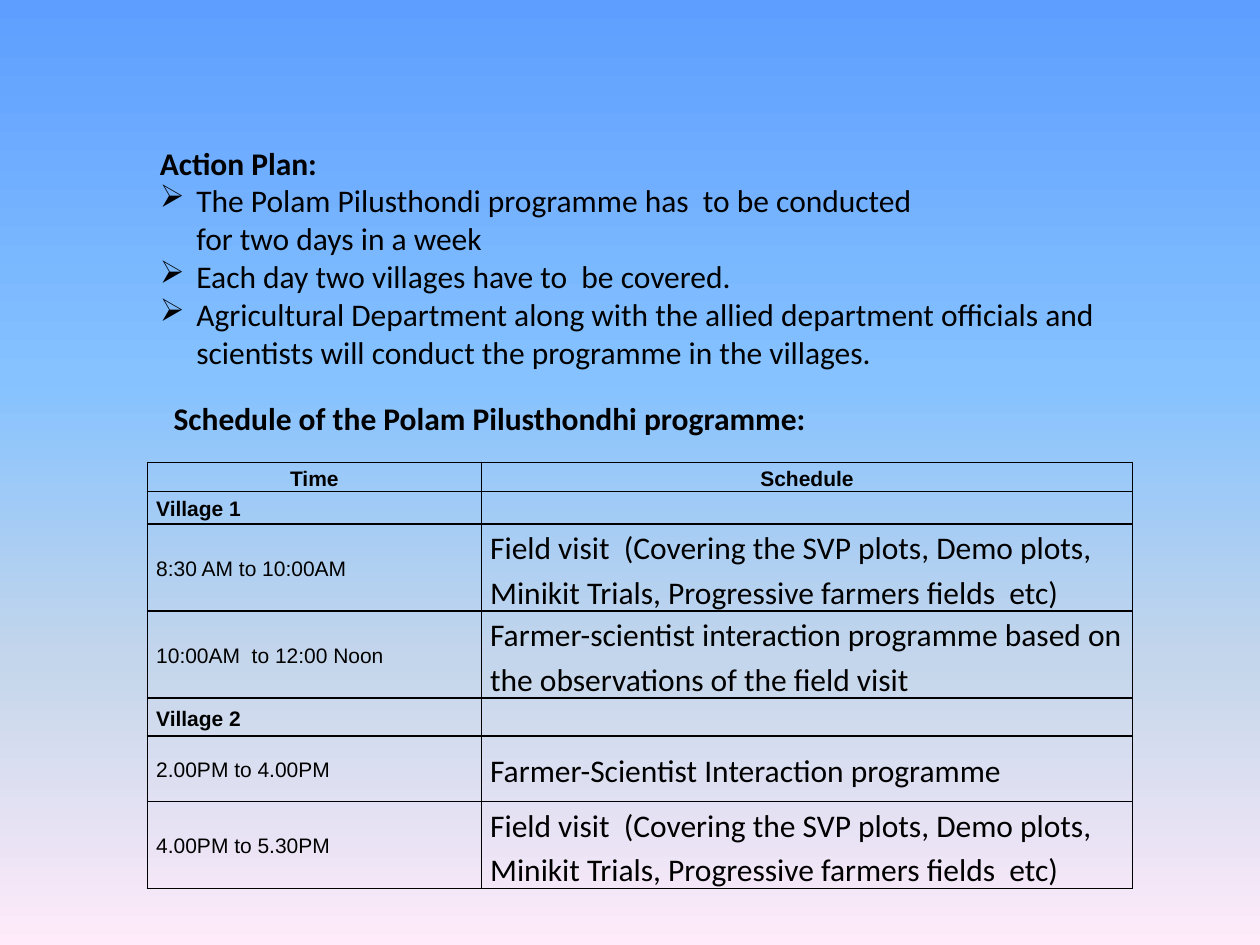
from lxml import etree
from pptx import Presentation
from pptx.dml.color import RGBColor
from pptx.enum import text
from pptx.oxml.ns import qn
from pptx.util import Inches, Pt

# Content
GRADIENT = [(0, "5E9EFF"), (40, "85C2FF"), (70, "C4D6EB"), (100, "FFEBFA")]
INK = "000000"
PLAN_HEADING = "Action Plan:"
PLAN = [  # (line, has bullet)
    ("The Polam Pilusthondi programme has  to be conducted", True),
    ("for two days in a week", False),
    ("Each day two villages have to  be covered.", True),
    ("Agricultural Department along with the allied department officials and "
     "scientists will conduct the programme in the villages.", True),
]
SCHEDULE_HEADING = "Schedule of the Polam Pilusthondhi programme:"
FIELD_VISIT = ("Field visit  (Covering the SVP plots, Demo plots, "
               "Minikit Trials, Progressive farmers fields  etc)")
SCHEDULE = [  # (time, activity, row height)
    ("Time", "Schedule", 0.23),
    ("Village 1", "", 0.26),
    ("8:30 AM to 10:00AM", FIELD_VISIT, 0.69),
    ("10:00AM  to 12:00 Noon",
     "Farmer-scientist interaction programme based on the observations of the field visit", 0.69),
    ("Village 2", "", 0.3),
    ("2.00PM to 4.00PM", "Farmer-Scientist Interaction programme", 0.52),
    ("4.00PM to 5.30PM", FIELD_VISIT, 0.69),
]
COLUMNS = [2.65, 5.17]
LEFT = 1.17
HANG = 0.29

BODY = {"name": "Calibri", "size": Pt(18), "bold": False}
HEADING = {**BODY, "bold": True}
TIME = {"name": "Arial", "size": Pt(12), "bold": False}
LABEL = {**TIME, "bold": True}


def rgb(value):
    return RGBColor.from_string(value)


def add_run(paragraph, words, style):
    run = paragraph.add_run()
    run.text = words
    for key, value in style.items():
        setattr(run.font, key, value)
    run.font.color.rgb = rgb(INK)


def add_color(parent, value):
    etree.SubElement(parent, qn("a:srgbClr"), val=value)


def indent(paragraph, left, first=0, bullet=None):
    props = paragraph._p.get_or_add_pPr()
    props.set("marL", str(Inches(left)))
    props.set("indent", str(Inches(first)))
    if bullet:
        etree.SubElement(props, qn("a:buChar"), char=bullet)


def add_frame(slide, top, width, height):
    box = slide.shapes.add_textbox(Inches(LEFT), Inches(top), Inches(width), Inches(height))
    box.text_frame.word_wrap = True
    return box.text_frame


def add_borders(cell):
    props = cell._tc.get_or_add_tcPr()
    for place, side in enumerate(("lnL", "lnR", "lnT", "lnB")):
        line = etree.Element(qn("a:" + side), w=str(Pt(1)))
        add_color(etree.SubElement(line, qn("a:solidFill")), INK)
        props.insert(place, line)


def fill_cell(cell, words, style, centred):
    cell.fill.background()
    add_borders(cell)
    cell.margin_left = cell.margin_right = Inches(0.07)
    cell.margin_top = cell.margin_bottom = 0
    cell.vertical_anchor = text.MSO_ANCHOR.MIDDLE
    paragraph = cell.text_frame.paragraphs[0]
    if not words:
        # Small end mark keeps an empty cell from stretching its row
        etree.SubElement(paragraph._p, qn("a:endParaRPr"), sz="1200")
        return
    paragraph.line_spacing = 1.15
    if centred:
        paragraph.alignment = text.PP_ALIGN.CENTER
    add_run(paragraph, words, style)


def main():
    prs = Presentation()
    prs.slide_width, prs.slide_height = Inches(10), Inches(7.5)
    slide = prs.slides.add_slide(prs.slide_layouts[6])

    # Background gradient, top to bottom
    backdrop = slide.background.fill
    backdrop.gradient()
    backdrop.gradient_angle = 270
    stops = next(slide._element.iter(qn("a:gsLst")))
    for stop in list(stops):
        stops.remove(stop)
    for percent, value in GRADIENT:
        add_color(etree.SubElement(stops, qn("a:gs"), pos=str(percent * 1000)), value)

    # Action plan
    plan = add_frame(slide, 1.09, 7.97, 1.92)
    add_run(plan.paragraphs[0], PLAN_HEADING, HEADING)
    for words, bulleted in PLAN:
        paragraph = plan.add_paragraph()
        if bulleted:
            indent(paragraph, HANG, -HANG, "➢")
        else:
            indent(paragraph, HANG)
        add_run(paragraph, words, BODY)

    # Schedule heading
    heading = add_frame(slide, 3.12, 7.27, 0.4).paragraphs[0]
    indent(heading, 0.11)
    add_run(heading, SCHEDULE_HEADING, HEADING)

    # Schedule table
    total = sum(height for _, _, height in SCHEDULE)
    table = slide.shapes.add_table(
        len(SCHEDULE), len(COLUMNS), Inches(LEFT), Inches(3.67),
        Inches(sum(COLUMNS)), Inches(total)).table
    table.first_row = table.horz_banding = False
    for column, width in zip(table.columns, COLUMNS):
        column.width = Inches(width)
    for index, (time, activity, height) in enumerate(SCHEDULE):
        table.rows[index].height = Inches(height)
        header = index == 0
        time_style = LABEL if header or not activity else TIME
        fill_cell(table.cell(index, 0), time, time_style, header)
        fill_cell(table.cell(index, 1), activity, LABEL if header else BODY, header)

    prs.save("out.pptx")


if __name__ == "__main__":
    main()
